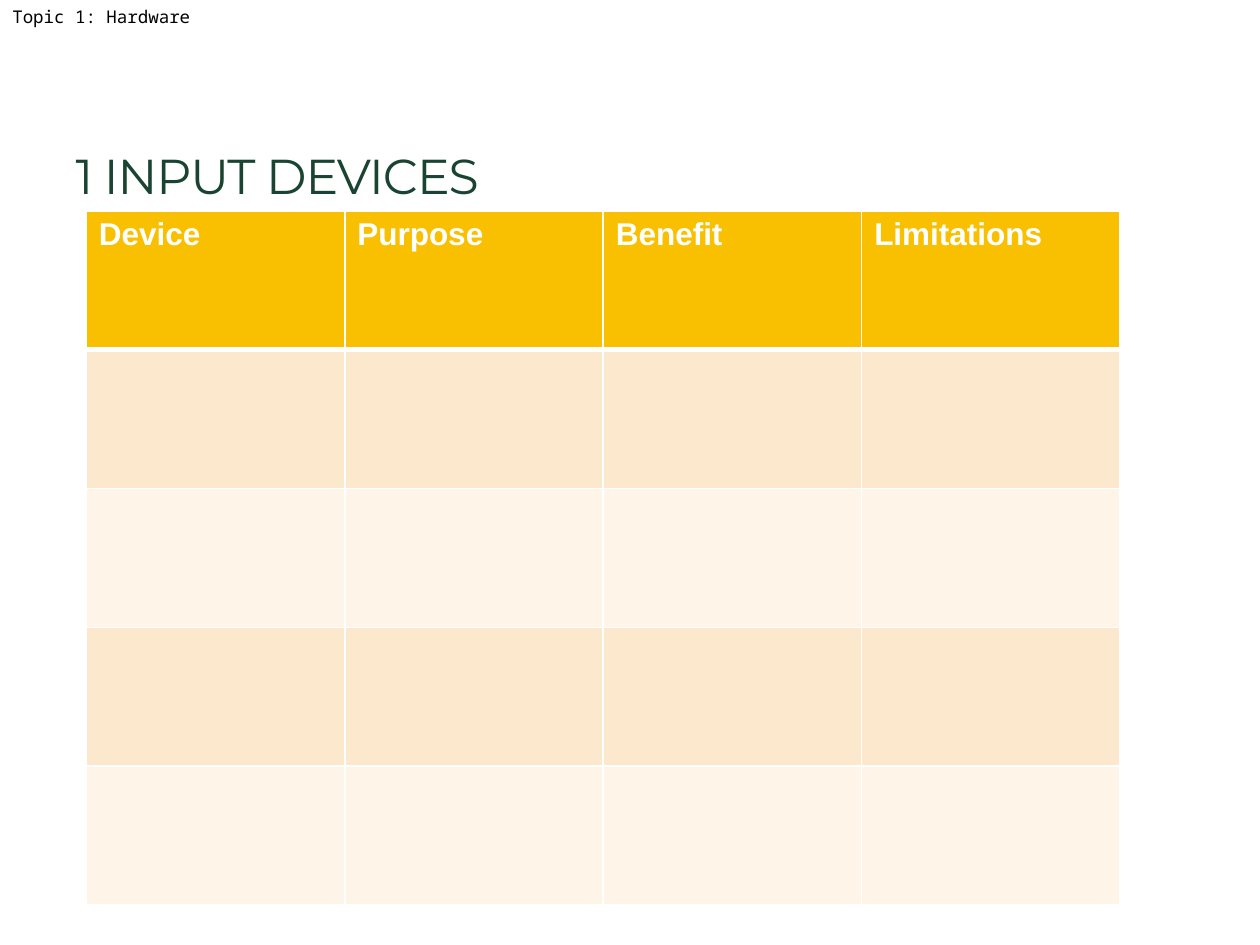
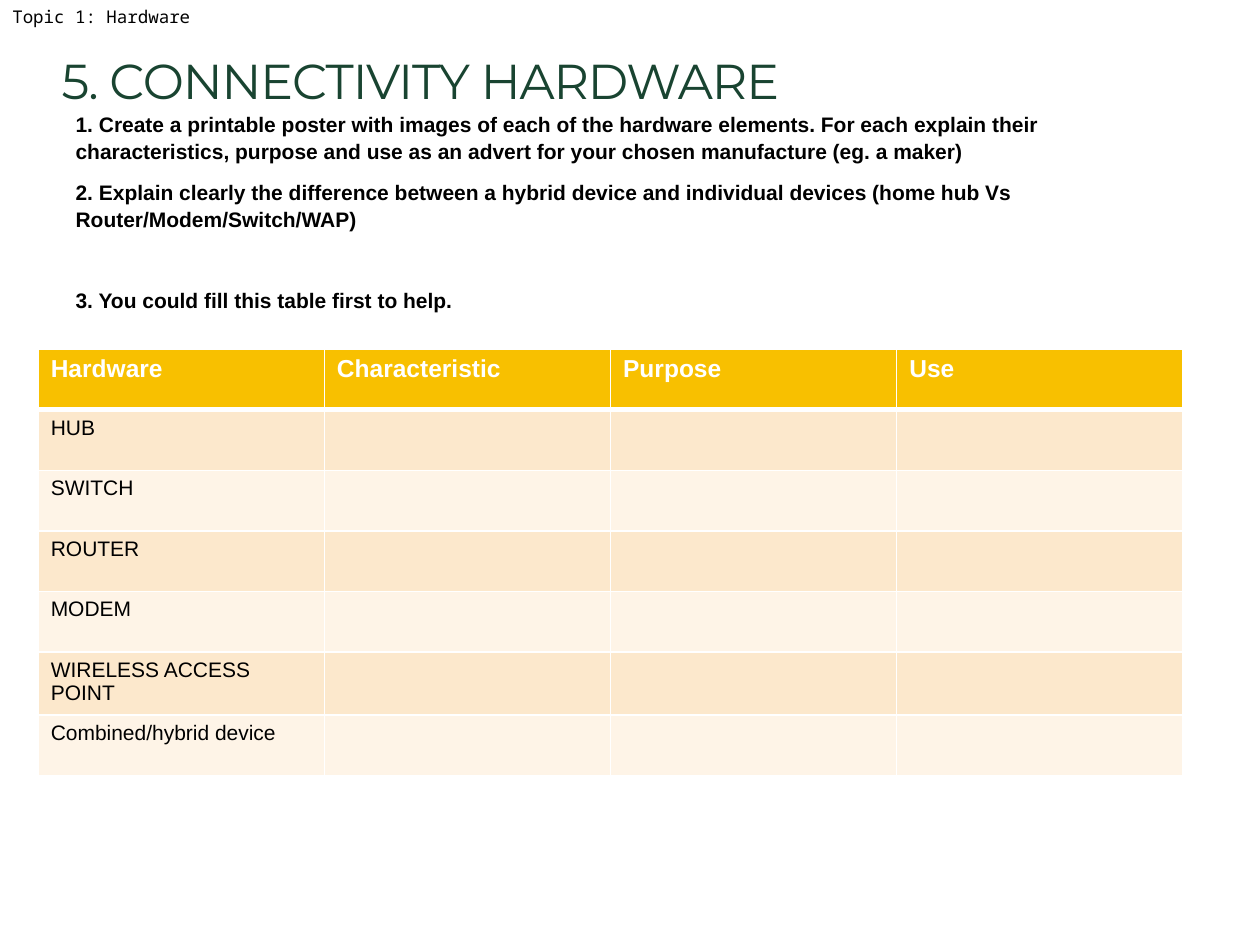
"""Build two worksheet slides on input devices and connectivity hardware."""
import lxml.etree
import pptx
import pptx.dml.color
import pptx.enum.text
import pptx.oxml.ns
import pptx.util

Cm = pptx.util.Cm
Pt = pptx.util.Pt

COLOURS = {
    "title": "194431",
    "text": "000000",
    "white": "FFFFFF",
    "header": "F8C000",
    "odd_row": "FCE8CC",
    "even_row": "FEF4E7",
}
TOPIC = "Topic 1: Hardware"
TITLE_ONLY, TITLE_AND_BODY = 5, 1

DEVICE_ROWS = [["Device", "Purpose", "Benefit", "Limitations"]] + [[""] * 4 for _ in range(4)]
HARDWARE = ["HUB", "SWITCH", "ROUTER", "MODEM", "WIRELESS ACCESS POINT", "Combined/hybrid device"]
HARDWARE_ROWS = [["Hardware", "Characteristic", "Purpose", "Use"]] + [
    [name, "", "", ""] for name in HARDWARE
]
TASKS = [
    ("1. Create a printable poster with images of each of the hardware elements. For each explain "
     "their characteristics, purpose and use as an advert for your chosen manufacture (eg. a maker)", 0),
    ("2. Explain clearly the difference between a hybrid device and individual devices "
     "(home hub Vs Router/Modem/Switch/WAP)", 2),
    ("3. You could fill this table first to help.", 25),
]


def rgb(colour):
    return pptx.dml.color.RGBColor.from_string(COLOURS[colour])


def style(paragraph, size, colour="text", face="Arial", bold=False):
    font = paragraph.font
    font.name, font.size, font.bold = face, Pt(size), bold
    font.color.rgb = rgb(colour)


def place(shape, left, top, width, height):
    shape.left, shape.top, shape.width, shape.height = (Cm(n) for n in (left, top, width, height))


def add_slide(deck, layout, title, *title_box):
    slide = deck.slides.add_slide(deck.slide_layouts[layout])
    heading = slide.shapes.title
    place(heading, *title_box)
    frame = heading.text_frame
    frame.text = title
    frame.auto_size = pptx.enum.text.MSO_AUTO_SIZE.NONE
    frame.vertical_anchor = pptx.enum.text.MSO_ANCHOR.BOTTOM
    line = frame.paragraphs[0]
    line.alignment = pptx.enum.text.PP_ALIGN.LEFT
    style(line, 28, "title", "Montserrat")
    line.runs[0]._r.get_or_add_rPr().set("spc", "-60")

    topic = slide.shapes.add_textbox(0, 0, Cm(4.14), Cm(0.69)).text_frame
    topic.word_wrap = False
    topic.auto_size = pptx.enum.text.MSO_AUTO_SIZE.SHAPE_TO_FIT_TEXT
    topic.text = TOPIC
    style(topic.paragraphs[0], 10, face="Noto Sans Mono")
    return slide


def fill_tasks(body, tasks):
    place(body, 1.27, 2.08, 21.16, 12.14)
    frame = body.text_frame
    frame.auto_size = pptx.enum.text.MSO_AUTO_SIZE.NONE
    frame.text = "\n".join(text for text, _ in tasks)
    for paragraph, (_, gap) in zip(frame.paragraphs, tasks):
        properties = paragraph._p.get_or_add_pPr()
        properties.set("marL", "0")
        properties.set("indent", "0")
        lxml.etree.SubElement(properties, pptx.oxml.ns.qn("a:buNone"))
        paragraph.line_spacing = 1.07
        paragraph.space_before, paragraph.space_after = Pt(gap), Pt(6)
        style(paragraph, 12, bold=True)


def add_borders(cell, top, bottom):
    properties = cell._tc.get_or_add_tcPr()
    for side, width in (("L", 1), ("R", 1), ("T", top), ("B", bottom)):
        line = lxml.etree.SubElement(properties, pptx.oxml.ns.qn(f"a:ln{side}"), w=str(Pt(width)))
        fill = lxml.etree.SubElement(line, pptx.oxml.ns.qn("a:solidFill"))
        lxml.etree.SubElement(fill, pptx.oxml.ns.qn("a:srgbClr"), val=COLOURS["white"])


def add_worksheet(slide, rows, left, top, column_width, row_height, header_size):
    columns = len(rows[0])
    table = slide.shapes.add_table(
        len(rows), columns, Cm(left), Cm(top),
        Cm(column_width * columns), Cm(row_height * len(rows)),
    ).table
    table.horz_banding = False
    for column in table.columns:
        column.width = Cm(column_width)
    for r, texts in enumerate(rows):
        table.rows[r].height = Cm(row_height)
        band = "header" if r == 0 else "odd_row" if r % 2 else "even_row"
        for c, text in enumerate(texts):
            cell = table.cell(r, c)
            add_borders(cell, top=3 if r == 1 else 1, bottom=3 if r == 0 else 1)
            cell.fill.solid()
            cell.fill.fore_color.rgb = rgb(band)
            if text:
                cell.text = text
                if r == 0:
                    style(cell.text_frame.paragraphs[0], header_size, "white", bold=True)
                else:
                    style(cell.text_frame.paragraphs[0], 12)


def main():
    deck = pptx.Presentation()
    deck.slide_width, deck.slide_height = Cm(25.4), Cm(19.05)

    devices = add_slide(deck, TITLE_ONLY, "1 INPUT DEVICES", 1.27, 0.84, 16.08, 3.4)
    add_worksheet(devices, DEVICE_ROWS, 1.74, 4.25, 5.21, 2.8, header_size=18)

    connectivity = add_slide(
        deck, TITLE_AND_BODY, "5. CONNECTIVITY HARDWARE", 0.99, -1.07, 20.88, 3.4)
    fill_tasks(connectivity.placeholders[1], TASKS)
    add_worksheet(connectivity, HARDWARE_ROWS, 0.77, 7.04, 5.77, 1.22, header_size=14)

    deck.save("out.pptx")


if __name__ == "__main__":
    main()
